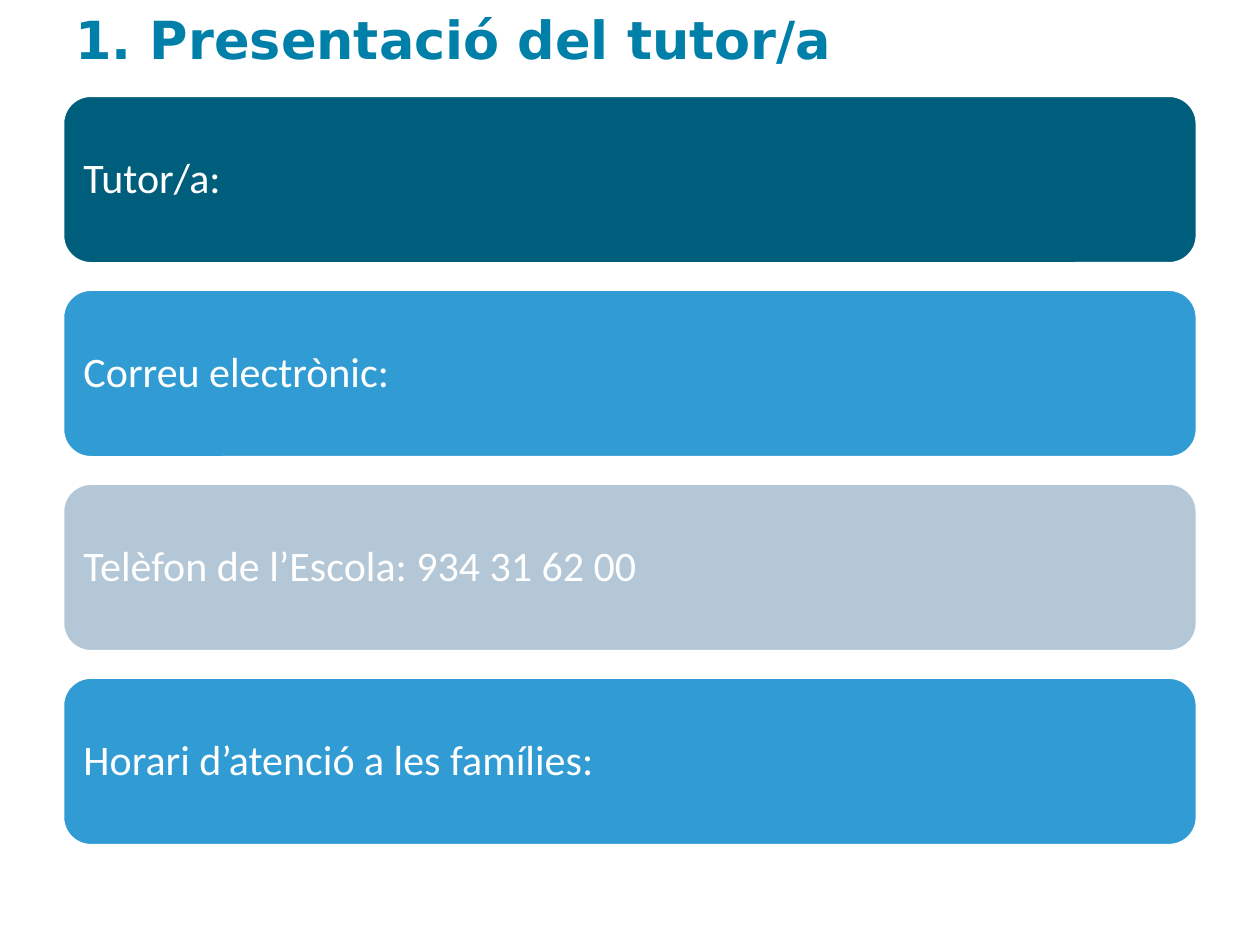
from pptx import Presentation
from pptx.dml.color import RGBColor
from pptx.enum.shapes import MSO_SHAPE as Shape
from pptx.enum.text import MSO_ANCHOR as Anchor, PP_ALIGN as Align
from pptx.util import Cm, Pt

WHITE = RGBColor(0xFF, 0xFF, 0xFF)
TEAL = RGBColor(0x00, 0x7F, 0xA9)
NAVY = RGBColor(0x00, 0x5E, 0x7D)
BLUE = RGBColor(0x31, 0x9C, 0xD3)
GREY = RGBColor(0xB4, 0xC7, 0xD6)

LEFT, WIDTH = Cm(1.27), Cm(22.86)
TOP, HEIGHT, STEP = Cm(1.93), Cm(3.38), Cm(3.91)
CARDS = [
    ("Tutor/a:", NAVY),
    ("Correu electrònic:", BLUE),
    ("Telèfon de l’Escola: 934 31 62 00", GREY),
    ("Horari d’atenció a les famílies:", BLUE),
]


class Deck:
    """Holds the text style and the current slide, and draws its elements."""

    def __init__(self, slide):
        self.slide = slide
        self.font, self.size = "Calibri", Pt(24)
        self.head_font, self.head_size = "DejaVu Sans", Pt(30)

    def add_text(self, para, text, name, size, color, bold=False):
        para.alignment = Align.LEFT
        run = para.add_run()
        run.text = text
        font = run.font
        font.name, font.size, font.bold = name, size, bold
        font.color.rgb = color

    def title(self, text):
        box = self.slide.shapes.add_textbox(LEFT, Cm(0.23), WIDTH, Cm(1.3))
        frame = box.text_frame
        frame.word_wrap = True
        frame.vertical_anchor = Anchor.BOTTOM
        self.add_text(frame.paragraphs[0], text, self.head_font, self.head_size, TEAL, True)

    def card(self, top, text, fill):
        card = self.slide.shapes.add_shape(Shape.ROUNDED_RECTANGLE, LEFT, top, WIDTH, HEIGHT)
        card.shadow.inherit = False
        card.fill.solid()
        card.fill.fore_color.rgb = fill
        card.line.color.rgb = WHITE
        card.line.width = Pt(1.5)
        frame = card.text_frame
        frame.word_wrap = True
        frame.vertical_anchor = Anchor.MIDDLE
        frame.margin_left = frame.margin_right = Cm(0.25)
        frame.margin_top = frame.margin_bottom = Cm(0.25)
        para = frame.paragraphs[0]
        para.line_spacing = 0.9
        self.add_text(para, text, self.font, self.size, WHITE)


def main():
    show = Presentation()
    show.slide_width, show.slide_height = Cm(25.4), Cm(19.05)
    deck = Deck(show.slides.add_slide(show.slide_layouts[6]))
    deck.title("1. Presentació del tutor/a")
    for row, (text, fill) in enumerate(CARDS):
        deck.card(TOP + row * STEP, text, fill)
    show.save("out.pptx")


if __name__ == "__main__":
    main()
